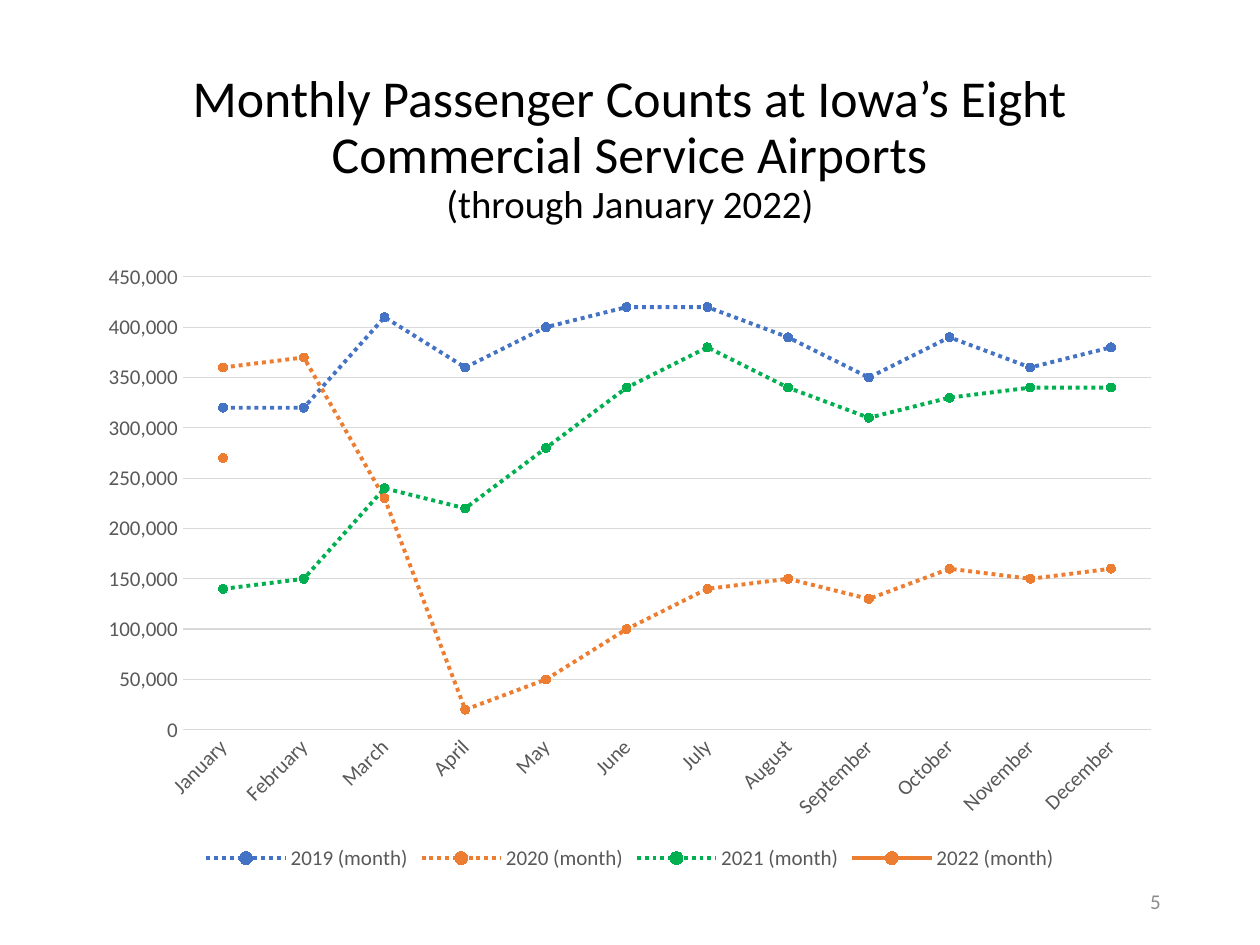
import pptx
import pptx.util
import pptx.chart.data
import pptx.dml.color
import pptx.enum.chart
import pptx.enum.dml
import pptx.enum.text

WIDE, HIGH = 10, 7.5
FONT = "Calibri"
HUES = {
    "ink": "000000", "gray": "595959", "pale": "8C8C8C", "grid": "D9D9D9",
    "blue": "4472C4", "rust": "ED7D31", "green": "00B050",
}
MONTHS = ["January", "February", "March", "April", "May", "June", "July",
          "August", "September", "October", "November", "December"]
YEARS = [
    ("2019 (month)", "blue", True, [32, 32, 41, 36, 40, 42, 42, 39, 35, 39, 36, 38]),
    ("2020 (month)", "rust", True, [36, 37, 23, 2, 5, 10, 14, 15, 13, 16, 15, 16]),
    ("2021 (month)", "green", True, [14, 15, 24, 22, 28, 34, 38, 34, 31, 33, 34, 34]),
    ("2022 (month)", "rust", False, [27] + [None] * 11),
]
UNIT = 10000
LEFT, SPAN = 0.69 / WIDE, 8.62 / WIDE
BOXES = {
    "title": (LEFT, 0.4 / HIGH, SPAN, 1.45 / HIGH),
    "chart": (LEFT, 2 / HIGH, SPAN, 4.95 / HIGH),
    "page": (7.06 / WIDE, 6.95 / HIGH, 2.25 / WIDE, 0.4 / HIGH),
}


def place(box):
    return [pptx.util.Inches(part * side)
            for part, side in zip(box, (WIDE, HIGH, WIDE, HIGH))]


def hue(name):
    return pptx.dml.color.RGBColor.from_string(HUES[name])


def style(font, size, name):
    font.name = FONT
    font.size = pptx.util.Pt(size)
    font.bold = False
    font.color.rgb = hue(name)


def stroke(line, name, width):
    line.color.rgb = hue(name)
    line.width = pptx.util.Pt(width)


def add_text(slide, box, rows, name, align, anchor, space=1.0):
    frame = slide.shapes.add_textbox(*place(box)).text_frame
    frame.word_wrap = True
    frame.vertical_anchor = anchor
    for num, (text, size) in enumerate(rows):
        para = frame.add_paragraph() if num else frame.paragraphs[0]
        para.alignment = align
        para.line_spacing = space
        run = para.add_run()
        run.text = text
        style(run.font, size, name)


def add_title(slide, box):
    rows = [
        ("Monthly Passenger Counts at Iowa’s Eight Commercial Service Airports", 29.6),
        ("(through January 2022)", 22.2),
    ]
    add_text(slide, box, rows, "ink", pptx.enum.text.PP_ALIGN.CENTER,
             pptx.enum.text.MSO_ANCHOR.BOTTOM, 0.9)


def add_page(slide, box):
    add_text(slide, box, [("5", 12)], "pale", pptx.enum.text.PP_ALIGN.RIGHT,
             pptx.enum.text.MSO_ANCHOR.MIDDLE)


def set_axes(chart):
    for axis in (chart.category_axis, chart.value_axis):
        axis.major_tick_mark = pptx.enum.chart.XL_TICK_MARK.NONE
        axis.minor_tick_mark = pptx.enum.chart.XL_TICK_MARK.NONE
        style(axis.tick_labels.font, 12, "gray")
    stroke(chart.category_axis.format.line, "grid", 0.75)
    axis = chart.value_axis
    axis.format.line.fill.background()
    axis.has_major_gridlines = True
    stroke(axis.major_gridlines.format.line, "grid", 0.75)
    axis.minimum_scale = 0
    axis.maximum_scale = 450000
    axis.major_unit = 50000
    axis.tick_labels.number_format = "#,##0"
    axis.tick_labels.number_format_is_linked = False


def set_line(line, name, dots):
    line.smooth = False
    stroke(line.format.line, name, 2.25)
    if dots:
        line.format.line.dash_style = pptx.enum.dml.MSO_LINE.ROUND_DOT
    mark = line.marker
    mark.style = pptx.enum.chart.XL_MARKER_STYLE.CIRCLE
    mark.size = 5
    mark.format.fill.solid()
    mark.format.fill.fore_color.rgb = hue(name)
    stroke(mark.format.line, name, 0.75)


def add_graph(slide, box):
    data = pptx.chart.data.CategoryChartData(number_format="#,##0")
    data.categories = MONTHS
    for label, name, dots, counts in YEARS:
        data.add_series(label, [c and c * UNIT for c in counts])
    chart = slide.shapes.add_chart(
        pptx.enum.chart.XL_CHART_TYPE.LINE_MARKERS, *place(box), data).chart
    style(chart.font, 10, "ink")
    chart.has_title = False
    chart.has_legend = True
    chart.legend.position = pptx.enum.chart.XL_LEGEND_POSITION.BOTTOM
    chart.legend.include_in_layout = False
    style(chart.legend.font, 12, "gray")
    set_axes(chart)
    plot = chart.plots[0]
    plot.vary_by_categories = False
    for line, (label, name, dots, counts) in zip(plot.series, YEARS):
        set_line(line, name, dots)


def main():
    deck = pptx.Presentation()
    deck.slide_width = pptx.util.Inches(WIDE)
    deck.slide_height = pptx.util.Inches(HIGH)
    slide = deck.slides.add_slide(deck.slide_layouts[6])
    add_graph(slide, BOXES["chart"])
    add_page(slide, BOXES["page"])
    add_title(slide, BOXES["title"])
    deck.save("out.pptx")


if __name__ == "__main__":
    main()
